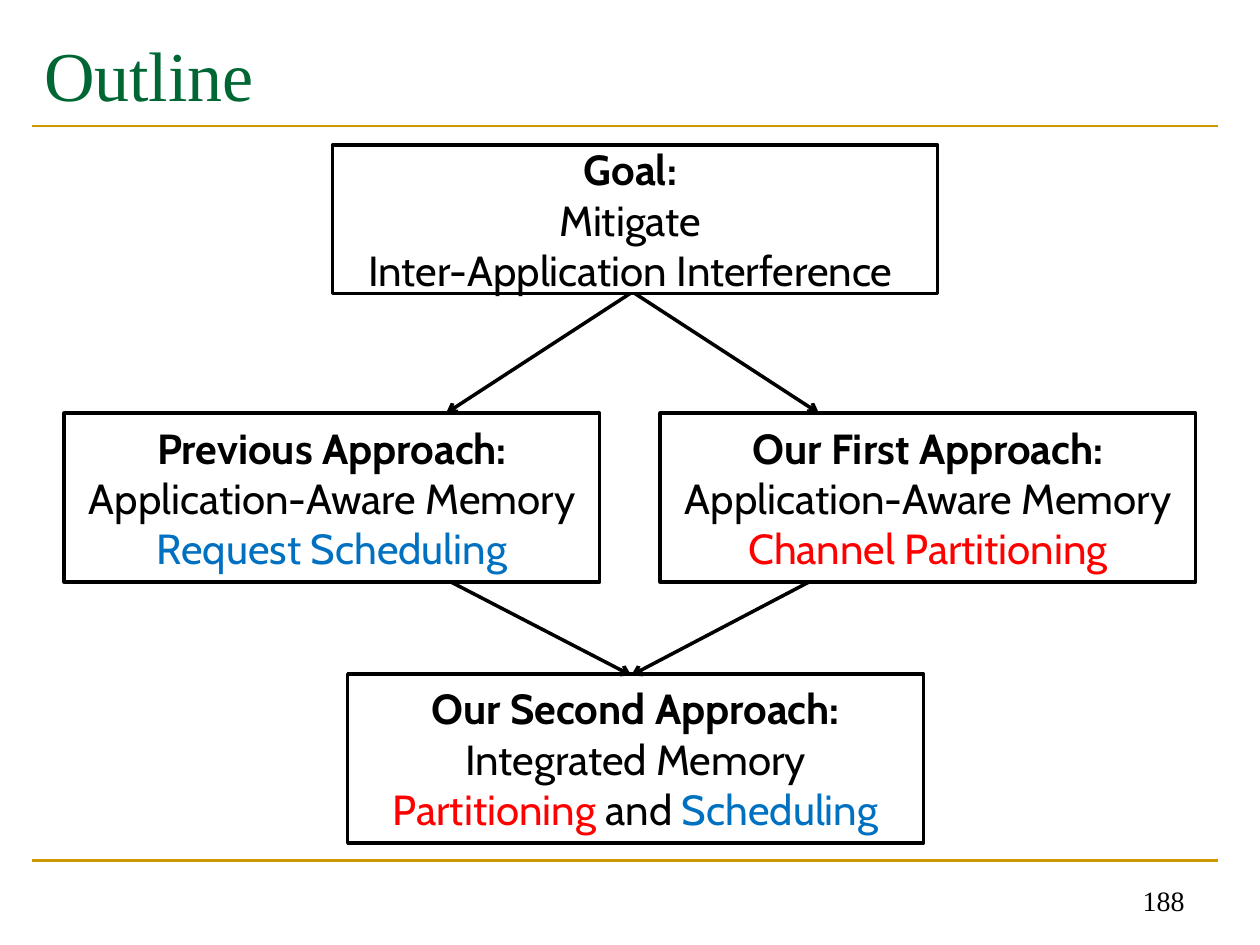
import pptx
import pptx.util
import pptx.dml.color
import pptx.enum.shapes
import pptx.enum.text
import pptx.oxml
import pptx.oxml.ns

ALIGN = pptx.enum.text.PP_ALIGN
ANCHOR = pptx.enum.text.MSO_ANCHOR
BLACK, BLUE, RED, GREEN, GOLD = "000000", "0070C0", "FF0000", "006633", "CC9900"
SERIF, SANS = "Times New Roman", "Cabin"


def rgb(value):
    return pptx.dml.color.RGBColor.from_string(value)


class Deck:
    """Style and current slide; lengths are in cells of a 100 x 75 grid."""

    cols, rows = 100, 75

    def __init__(self, width, height):
        self.prs = pptx.Presentation()
        self.prs.slide_width = pptx.util.Inches(width)
        self.prs.slide_height = pptx.util.Inches(height)
        self.s = self.prs.slides.add_slide(self.prs.slide_layouts[5])

    def place(self, *cells):
        units = (self.prs.slide_width / self.cols, self.prs.slide_height / self.rows)
        return [round(c * units[i % 2]) for i, c in enumerate(cells)]

    def text(self, tf, paragraphs, size, font, align, anchor):
        frame = {"word_wrap": True, "vertical_anchor": anchor,
                 "auto_size": pptx.enum.text.MSO_AUTO_SIZE.NONE}
        for name, value in frame.items():
            setattr(tf, name, value)
        for i, runs in enumerate(paragraphs):
            p = tf.add_paragraph() if i else tf.paragraphs[0]
            p.alignment = align
            for words, color, bold in runs:
                r = p.add_run()
                r.text = words
                style = {"size": pptx.util.Pt(size), "name": font, "bold": bold}
                for name, value in style.items():
                    setattr(r.font, name, value)
                r.font.color.rgb = rgb(color)

    def title(self, words, *cells):
        sp = self.s.shapes.title
        sp.left, sp.top, sp.width, sp.height = self.place(*cells)
        self.text(sp.text_frame, [[(words, GREEN, False)]], 40, SERIF,
                  ALIGN.LEFT, ANCHOR.MIDDLE)

    def label(self, words, *cells):
        sp = self.s.shapes.add_textbox(*self.place(*cells))
        self.text(sp.text_frame, [[(words, BLACK, False)]], 16, SERIF,
                  ALIGN.RIGHT, ANCHOR.BOTTOM)

    def box(self, paragraphs, *cells):
        sp = self.s.shapes.add_shape(
            pptx.enum.shapes.MSO_SHAPE.RECTANGLE, *self.place(*cells))
        sp.shadow.inherit = False
        sp.fill.background()
        sp.line.color.rgb = rgb(BLACK)
        sp.line.width = pptx.util.Pt(2)
        self.text(sp.text_frame, paragraphs, 24, SANS, ALIGN.CENTER, ANCHOR.MIDDLE)

    def line(self, *cells, color=BLACK, width=2, arrow=True):
        sp = self.s.shapes.add_connector(
            pptx.enum.shapes.MSO_CONNECTOR.STRAIGHT, *self.place(*cells))
        sp.line.color.rgb = rgb(color)
        sp.line.width = pptx.util.Pt(width)
        qn = pptx.oxml.ns.qn
        if arrow:
            tail = sp.line._get_or_add_ln().makeelement(qn("a:tailEnd"), {"type": "arrow"})
            sp.line._get_or_add_ln().append(tail)
        props = sp._element.spPr
        props.append(props.makeelement(qn("a:effectLst"), {}))


def main():
    deck = Deck(10, 7.5)

    # Rules, title and page number
    for y in (68.3, 10):
        deck.line(2.5, y, 96.7, y, color=GOLD, width=1.5, arrow=False)
    deck.title("Outline", 2.5, 1.7, 94.2, 8.3)
    deck.label("188", 71.7, 68.3, 23.3, 5)

    # Goal
    deck.box([[("Goal: ", BLACK, True)],
              [("Mitigate ", BLACK, False)],
              [("Inter-Application Interference ", BLACK, False)]],
             26.4, 11.5, 48, 11.8)

    # The two approaches, each with an arrow in and an arrow out
    approaches = [
        ("Previous Approach:", "Request Scheduling", BLUE, 5.1, 50, 35.4, 35.8),
        ("Our First Approach:", "Channel Partitioning", RED, 52.4, 50.4, 65, 64.2),
    ]
    for head, method, color, left, start, end, out in approaches:
        deck.line(start, 23.3, end, 32.8)
        deck.box([[(head, BLACK, True)],
                  [("Application-Aware Memory ", BLACK, False), (method, color, False)]],
                 left, 32.8, 42.5, 13.4)
        deck.line(out, 46.2, 50.1, 53.6)

    # Combined approach
    deck.box([[("Our Second Approach:", BLACK, True),
               (" Integrated Memory ", BLACK, False),
               ("Partitioning", RED, False),
               (" and ", BLACK, False),
               ("Scheduling", BLUE, False)]],
             27.6, 53.5, 45.7, 13.4)

    deck.prs.save("out.pptx")


if __name__ == "__main__":
    main()
